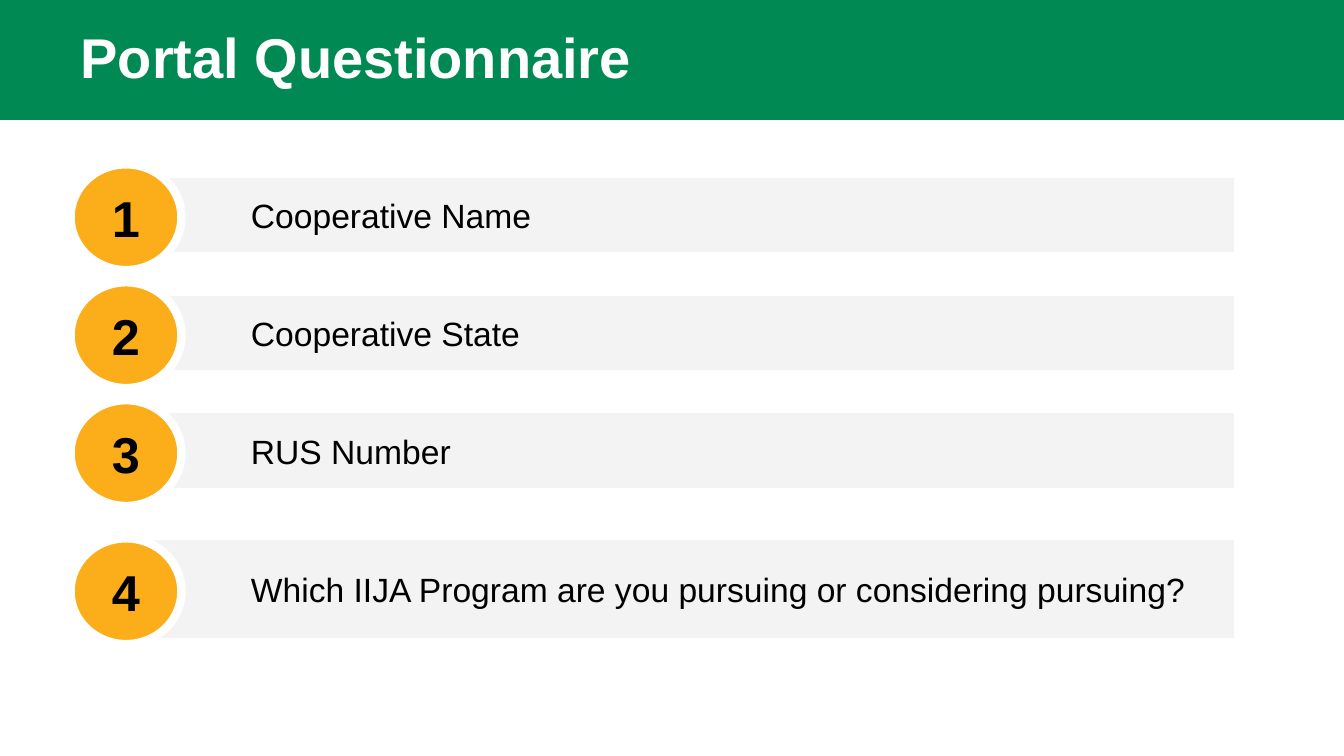
from pptx import Presentation
from pptx.dml.color import RGBColor
from pptx.enum.shapes import MSO_SHAPE
from pptx.enum.text import MSO_ANCHOR, MSO_AUTO_SIZE, PP_ALIGN
from pptx.util import Inches, Pt

RECT, OVAL = MSO_SHAPE.RECTANGLE, MSO_SHAPE.OVAL
LEFT, CENTER = PP_ALIGN.LEFT, PP_ALIGN.CENTER
MIDDLE = MSO_ANCHOR.MIDDLE

GREEN = RGBColor(0x00, 0x89, 0x53)
AMBER = RGBColor(0xFB, 0xAE, 0x1A)
GRAY = RGBColor(0xF3, 0xF3, 0xF3)
WHITE = RGBColor(0xFF, 0xFF, 0xFF)
BLACK = RGBColor(0x00, 0x00, 0x00)


def write(tf, text, size=24, color=BLACK, bold=False, align=LEFT,
          indent=0, spacing=1.0, margins=(0.1, 0.1, 0.1, 0.1)):
    """Fill a text frame with one formatted paragraph."""
    tf.word_wrap = True
    tf.auto_size = MSO_AUTO_SIZE.NONE
    tf.vertical_anchor = MIDDLE
    (tf.margin_left, tf.margin_top,
     tf.margin_right, tf.margin_bottom) = map(Inches, margins)
    p = tf.paragraphs[0]
    p.alignment = align
    p.line_spacing = spacing
    if indent:
        pPr = p._p.get_or_add_pPr()
        pPr.set("marL", str(Inches(indent)))
        pPr.set("indent", "0")
    r = p.add_run()
    r.text = text
    r.font.name = "Arial"
    r.font.size = Pt(size)
    r.font.bold = bold
    r.font.color.rgb = color


class QuestionSlide:
    def __init__(self, prs):
        self.s = prs.slides.add_slide(prs.slide_layouts[5])
        self.outline = Pt(6)

    def shape(self, kind, x, y, w, h, fill, outlined=True):
        sp = self.s.shapes.add_shape(kind, Inches(x), Inches(y), Inches(w), Inches(h))
        sp.shadow.inherit = False
        sp.fill.solid()
        sp.fill.fore_color.rgb = fill
        if outlined:
            sp.line.color.rgb = WHITE
            sp.line.width = self.outline
        else:
            sp.line.fill.background()
        return sp

    def title(self, text):
        band = self.shape(RECT, 0, 0, 13.33, 1.19, GREEN, outlined=False)
        sp = self.s.shapes.title
        sp._element.addprevious(band._element)  # band sits behind the title
        sp.left, sp.top = Inches(0.7), Inches(0)
        sp.width, sp.height = Inches(12), Inches(1.15)
        write(sp.text_frame, text, size=40, color=WHITE, bold=True,
              spacing=0.9, margins=(0.1, 0.05, 0.1, 0))

    def question(self, number, text, bar_top, bar_height, circle_top):
        bar = self.shape(RECT, 1.39, bar_top, 10.89, bar_height, GRAY)
        write(bar.text_frame, text, indent=1)
        circle = self.shape(OVAL, 0.7, circle_top, 1.1, 1.05, AMBER)
        write(circle.text_frame, str(number), size=36, bold=True, align=CENTER)


def main():
    prs = Presentation()
    prs.slide_width, prs.slide_height = Inches(13.33), Inches(7.5)
    slide = QuestionSlide(prs)

    # Header
    slide.title("Portal Questionnaire")

    # Evenly spaced short questions
    short = ["Cooperative Name", "Cooperative State", "RUS Number"]
    for i, text in enumerate(short):
        top = 1.72 + 1.17 * i
        slide.question(i + 1, text, top, 0.82, top - 0.09)

    # Taller closing question
    slide.question(4, "Which IIJA Program are you pursuing or considering pursuing?",
                   5.32, 1.05, 5.34)

    prs.save("out.pptx")


if __name__ == "__main__":
    main()
